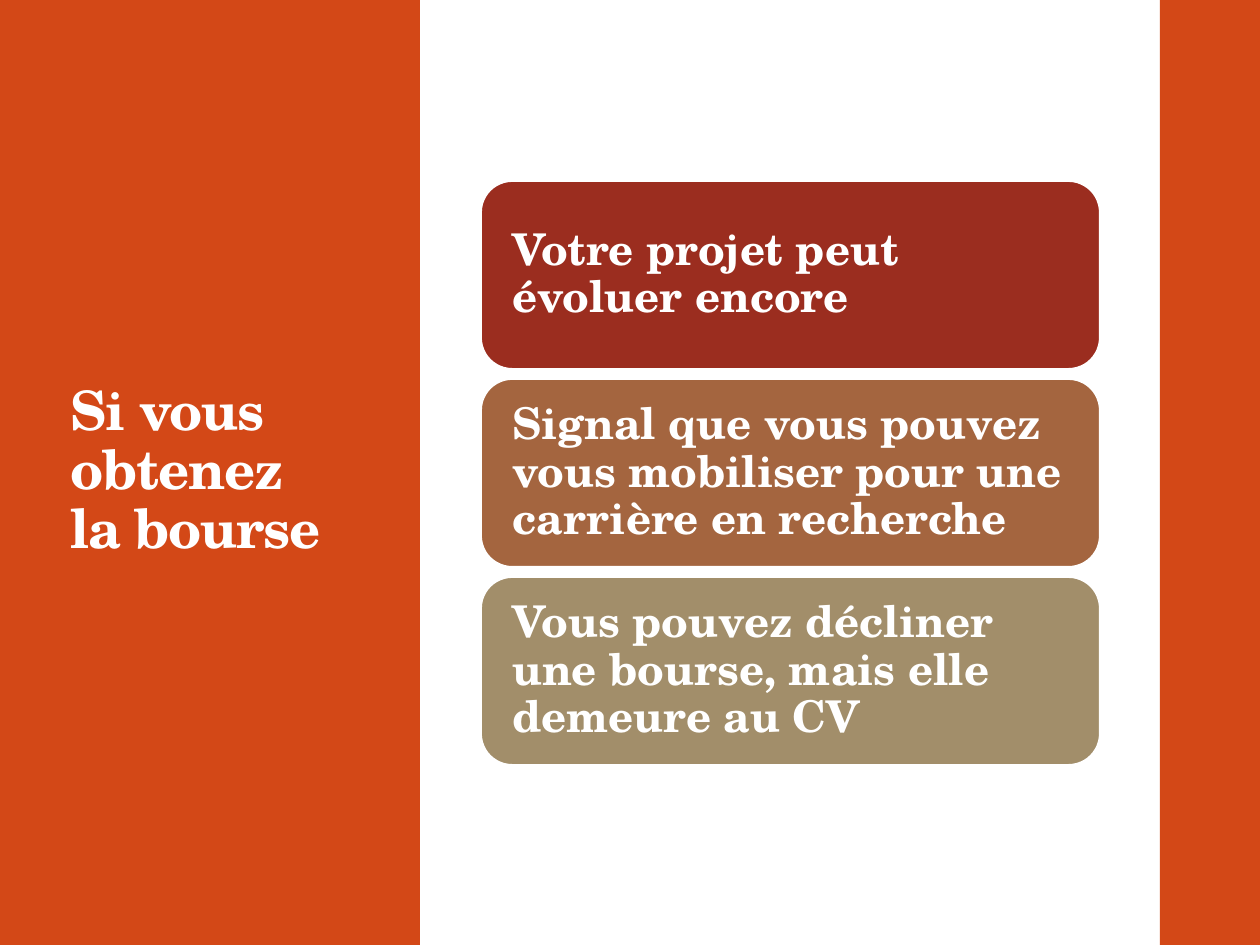
from pptx import Presentation
from pptx.dml.color import RGBColor
from pptx.enum.shapes import MSO_SHAPE
from pptx.enum.text import MSO_ANCHOR, MSO_AUTO_SIZE, PP_ALIGN
from pptx.util import Emu, Pt

RECT, ROUNDED = MSO_SHAPE.RECTANGLE, MSO_SHAPE.ROUNDED_RECTANGLE
MIDDLE, LEFT, NO_FIT = MSO_ANCHOR.MIDDLE, PP_ALIGN.LEFT, MSO_AUTO_SIZE.NONE

ORANGE = RGBColor(0xD3, 0x48, 0x17)
RED = RGBColor(0x9B, 0x2D, 0x1F)
BROWN = RGBColor(0xA4, 0x65, 0x3F)
TAN = RGBColor(0xA2, 0x8E, 0x6A)
WHITE = RGBColor(0xFF, 0xFF, 0xFF)

FONT = "TeX Gyre Schola"
PX_PER_INCH = 126
WIDTH, HEIGHT = 1260, 945

MESSAGES = [
    ("Votre projet peut évoluer encore", RED),
    ("Signal que vous pouvez vous mobiliser pour une carrière en recherche", BROWN),
    ("Vous pouvez décliner une bourse, mais elle demeure au CV", TAN),
]


def px(length):
    """Turn pixels into EMU."""
    return Emu(round(length * 914400 / PX_PER_INCH))


def set_attributes(target, values):
    """Set each attribute in the dict on the target."""
    for name, value in values.items():
        setattr(target, name, value)


def write(shape, text, size, inset_x, inset_y):
    """Write bold white text, left-aligned and vertically centred, and return its run."""
    frame = shape.text_frame
    frame.text = text
    set_attributes(frame, {
        "word_wrap": True, "auto_size": NO_FIT, "vertical_anchor": MIDDLE,
        "margin_left": px(inset_x), "margin_right": px(inset_x),
        "margin_top": px(inset_y), "margin_bottom": px(inset_y),
    })
    paragraph = frame.paragraphs[0]
    set_attributes(paragraph, {"alignment": LEFT, "line_spacing": 0.9})
    run = paragraph.runs[0]
    set_attributes(run.font, {"name": FONT, "size": Pt(size), "bold": True})
    run.font.color.rgb = WHITE
    return run


def add_block(slide, kind, box, colour):
    """Add a filled shape without outline or shadow."""
    block = slide.shapes.add_shape(kind, *map(px, box))
    block.shadow.inherit = False
    block.fill.solid()
    block.fill.fore_color.rgb = colour
    block.line.fill.background()
    return block


def add_title_panel(slide, box):
    """Fill the left panel and set the title on top of it."""
    left, top, width, height = box
    add_block(slide, RECT, box, ORANGE)
    title = slide.shapes.title
    title.element.getparent().append(title.element)
    set_attributes(title, {
        "left": px(left + 58), "top": px(top + 115),
        "width": px(width - 139), "height": px(height - 231),
    })
    run = write(title, "Si vous obtenez la bourse", 31, 13, 6)
    run.font._element.set("spc", "-70")


def add_messages(slide, box, gap):
    """Stack the message cards evenly in the box."""
    left, top, width, height = box
    card_height = (height - gap * (len(MESSAGES) - 1)) // len(MESSAGES)
    for index, (message, colour) in enumerate(MESSAGES):
        card_top = top + index * (card_height + gap)
        card = add_block(slide, ROUNDED, (left, card_top, width, card_height), colour)
        card.line.color.rgb = WHITE
        card.line.width = Pt(1.1)
        write(card, message, 25, 22, 22)


def main():
    """Build and save the slide."""
    deck = Presentation()
    set_attributes(deck, {"slide_width": px(WIDTH), "slide_height": px(HEIGHT)})
    slide = deck.slides.add_slide(deck.slide_layouts[5])
    add_title_panel(slide, (0, 0, 420, HEIGHT))
    add_block(slide, RECT, (1160, 0, 100, HEIGHT), ORANGE)
    add_messages(slide, (481, 181, 619, 584), 10)
    deck.save("out.pptx")


if __name__ == "__main__":
    main()
